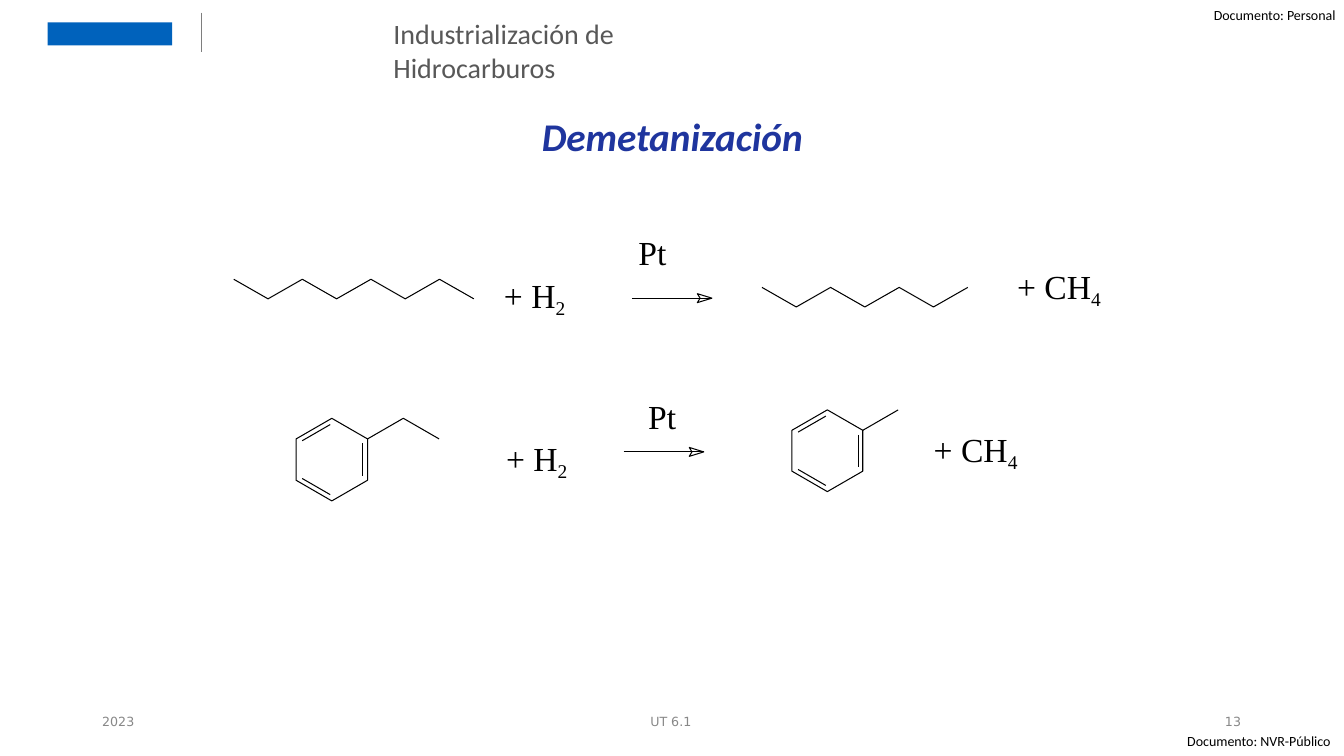
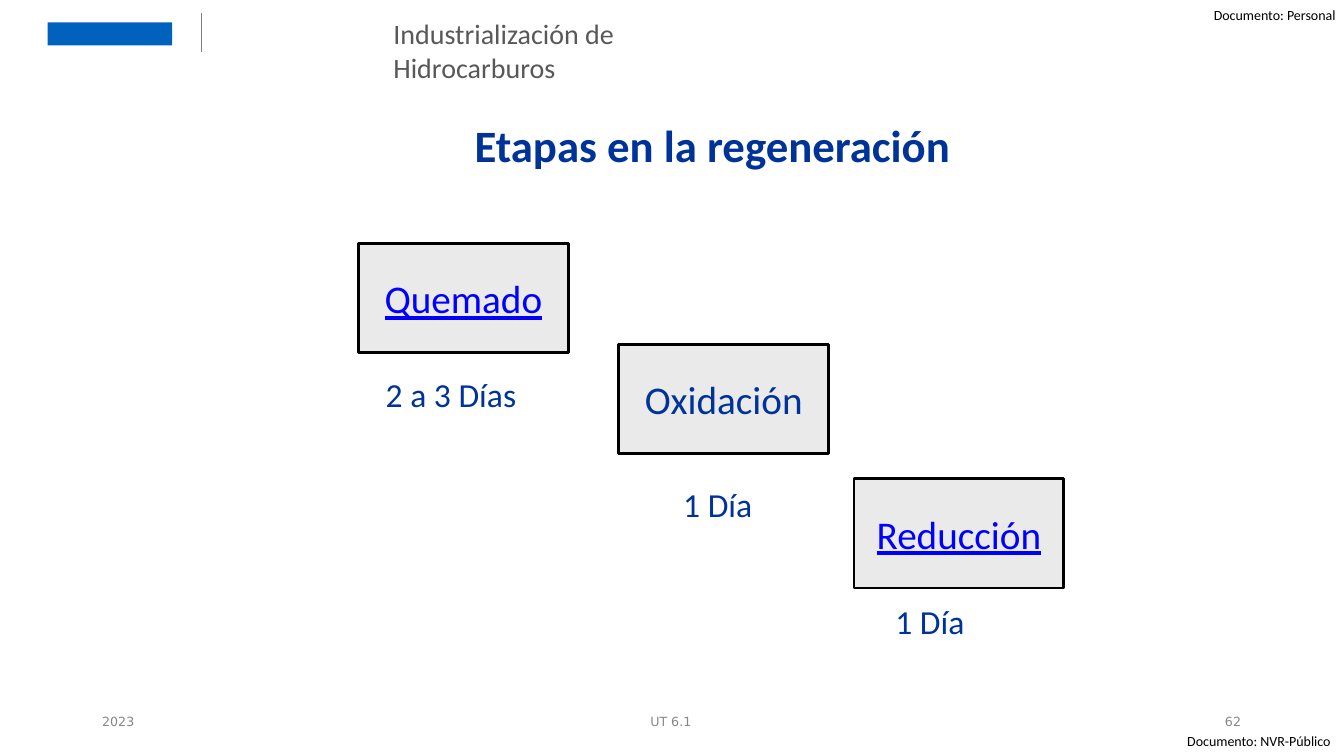
from math import cos, radians, sin

from pptx import Presentation
from pptx.dml.color import RGBColor
from pptx.enum.shapes import MSO_CONNECTOR, MSO_SHAPE
from pptx.enum.text import MSO_ANCHOR, MSO_AUTO_SIZE, PP_ALIGN
from pptx.oxml.ns import qn
from pptx.util import Pt

BLACK, NAVY, TITLE_BLUE, LINK_BLUE = "000000", "003399", "1F359E", "0000FF"
BRAND_BLUE, HEADER_GRAY, FOOTER_GRAY = "0062BC", "585858", "888888"
RULE_GRAY, BOX_GRAY = "7E7E7E", "EAEAEA"
SANS, SERIF, FOOTER_FONT = "Calibri", "Times New Roman", "DejaVu Sans"
BOND_WIDTH = 0.75
CHAIN_STEP, CHAIN_RISE = 24.5, 14


def color(hex_string):
    return RGBColor.from_string(hex_string)


def style_font(font, size, hex_string, name=SANS, bold=False, italic=False, underline=False):
    font.name = name
    font.size = Pt(size)
    font.bold, font.italic, font.underline = bold, italic, underline
    font.color.rgb = color(hex_string)


def set_frame(frame, anchor=MSO_ANCHOR.TOP):
    frame.margin_left = frame.margin_right = frame.margin_top = frame.margin_bottom = 0
    frame.word_wrap = True
    frame.auto_size = MSO_AUTO_SIZE.NONE
    frame.vertical_anchor = anchor


def add_text(slide, text, left, top, width, size, hex_string, name=SANS):
    """Add a left-aligned text box and return its paragraph."""
    box = slide.shapes.add_textbox(Pt(left), Pt(top), Pt(width), Pt(size * 1.25))
    set_frame(box.text_frame)
    paragraph = box.text_frame.paragraphs[0]
    paragraph.text = text
    style_font(paragraph.font, size, hex_string, name)
    return paragraph


def add_formula(slide, text, subscript, left, top):
    paragraph = add_text(slide, text, left, top, 72, 24, BLACK, SERIF)
    run = paragraph.add_run()
    run.text = subscript
    run._r.get_or_add_rPr().set("baseline", "-21000")


def add_line(slide, start, end, hex_string=BLACK, width=BOND_WIDTH):
    points = [Pt(value) for value in (*start, *end)]
    line = slide.shapes.add_connector(MSO_CONNECTOR.STRAIGHT, *points)
    line.line.color.rgb = color(hex_string)
    line.line.width = Pt(width)
    properties = line._element.spPr
    properties.append(properties.makeelement(qn("a:effectLst"), {}))


def add_outline(slide, points, close=False):
    """Add an unfilled path through the points."""
    start, *others = [(Pt(x), Pt(y)) for x, y in points]
    builder = slide.shapes.build_freeform(*start)
    builder.add_line_segments(others, close=close)
    shape = builder.convert_to_shape()
    shape.shadow.inherit = False
    shape.fill.background()
    shape.line.color.rgb = color(BLACK)
    shape.line.width = Pt(BOND_WIDTH)


def add_chain(slide, left, top, bonds):
    """Add a zigzag carbon chain that starts at a peak."""
    add_outline(slide, [(left + i * CHAIN_STEP, top + i % 2 * CHAIN_RISE)
                        for i in range(bonds + 1)])


def add_benzene(slide, center_x, center_y, radius, side_bonds):
    """Add a benzene ring with a side chain at its upper right corner."""
    def corners(size):
        return [(center_x + size * cos(radians(60 * i - 90)),
                 center_y + size * sin(radians(60 * i - 90))) for i in range(6)]

    ring, inner = corners(radius), corners(radius * 0.87)
    add_outline(slide, ring, close=True)
    for i in (1, 3, 5):
        (x1, y1), (x2, y2) = inner[i], inner[(i + 1) % 6]
        trim_x, trim_y = (x2 - x1) * 0.05, (y2 - y1) * 0.05
        add_line(slide, (x1 + trim_x, y1 + trim_y), (x2 - trim_x, y2 - trim_y))
    x, y = ring[1]
    step = x - center_x
    add_outline(slide, [(x + i * step, y - i % 2 * radius / 2)
                        for i in range(side_bonds + 1)])


def add_reaction_arrow(slide, left, y, length=57.2):
    tip = left + length
    add_line(slide, (left, y), (tip, y))
    add_outline(slide, [(tip, y), (tip - 10.4, y + 3.2), (tip - 8.4, y),
                        (tip - 10.4, y - 3.2)], close=True)


def add_rectangle(slide, left, top, width, height, fill):
    shape = slide.shapes.add_shape(MSO_SHAPE.RECTANGLE, Pt(left), Pt(top), Pt(width), Pt(height))
    shape.shadow.inherit = False
    shape.fill.solid()
    shape.fill.fore_color.rgb = color(fill)
    shape.line.fill.background()
    return shape


def add_stage(slide, name, left, top, hex_string, underline):
    shape = add_rectangle(slide, left, top, 150, 78, BOX_GRAY)
    shape.line.color.rgb = color(BLACK)
    shape.line.width = Pt(2)
    set_frame(shape.text_frame, MSO_ANCHOR.MIDDLE)
    paragraph = shape.text_frame.paragraphs[0]
    paragraph.text = name
    paragraph.alignment = PP_ALIGN.CENTER
    style_font(paragraph.font, 28, hex_string, underline=underline)


def set_title(slide, text, left, top, width, size, hex_string, italic=False):
    title = slide.shapes.title
    title.left, title.top, title.width, title.height = Pt(left), Pt(top), Pt(width), Pt(size * 1.25)
    set_frame(title.text_frame)
    paragraph = title.text_frame.paragraphs[0]
    paragraph.text = text
    paragraph.alignment = PP_ALIGN.LEFT
    style_font(paragraph.font, size, hex_string, bold=True, italic=italic)


def add_slide(presentation, page_number):
    """Add a title-only slide with the shared header and footer."""
    slide = presentation.slides.add_slide(presentation.slide_layouts[5])
    add_rectangle(slide, 34, 16, 89, 16.5, BRAND_BLUE)
    add_line(slide, (143.5, 9), (143.5, 37.5), RULE_GRAY, 0.5)
    add_text(slide, "Documento: Personal", 867, 5, 93, 10, BLACK)
    add_text(slide, "Industrialización de Hidrocarburos", 281, 12, 260, 20, HEADER_GRAY)
    for text, left in (("2023", 73), ("UT 6.1", 464.5), (page_number, 875)):
        add_text(slide, text, left, 510, 60, 9, FOOTER_GRAY, FOOTER_FONT)
    add_text(slide, "Documento: NVR-Público", 848, 523.5, 112, 10, BLACK)
    return slide


def build_demethanization(presentation):
    slide = add_slide(presentation, "13")
    set_title(slide, "Demetanización", 387, 80.5, 200, 28, TITLE_BLUE, italic=True)
    add_chain(slide, 167, 199.5, 7)
    add_chain(slide, 544.3, 205.3, 6)
    add_benzene(slide, 237, 328.3, 29.5, 2)
    add_benzene(slide, 591, 322, 29.2, 1)
    for left, y in ((451.3, 213), (445.5, 322.8)):
        add_reaction_arrow(slide, left, y)
    for left, top in ((456, 166), (463, 283)):
        add_text(slide, "Pt", left, top, 36, 24, BLACK, SERIF)
    for text, subscript, left, top in (("+ H", "2", 360, 196.5), ("+ CH", "4", 726.5, 190),
                                       ("+ H", "2", 361.5, 313), ("+ CH", "4", 667, 306.5)):
        add_formula(slide, text, subscript, left, top)


def build_regeneration(presentation):
    slide = add_slide(presentation, "62")
    set_title(slide, "Etapas en la regeneración", 339, 84, 360, 32, NAVY)
    for name, left, top, hex_string, underline in (
            ("Quemado", 256, 174, LINK_BLUE, True),
            ("Oxidación", 442, 246, NAVY, False),
            ("Reducción", 610, 342, LINK_BLUE, True)):
        add_stage(slide, name, left, top, hex_string, underline)
    for text, left, top in (("2 a 3 Días", 275.5, 267), ("1 Día", 488, 345.5),
                            ("1 Día", 639.5, 429)):
        add_text(slide, text, left, top, 110, 24, NAVY)


def main():
    presentation = Presentation()
    presentation.slide_width, presentation.slide_height = Pt(960), Pt(540)
    build_demethanization(presentation)
    build_regeneration(presentation)
    presentation.save("out.pptx")


if __name__ == "__main__":
    main()
